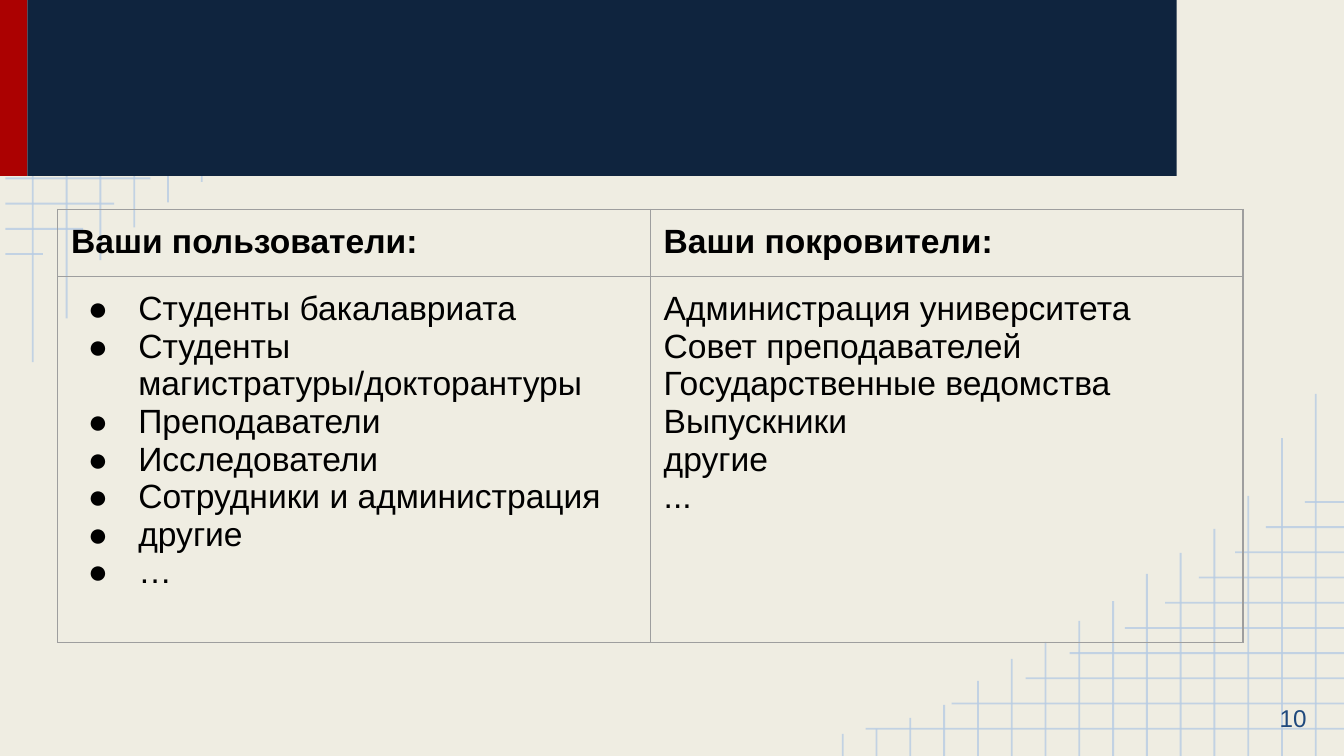
from dataclasses import dataclass

from lxml.etree import SubElement
from pptx import Presentation
from pptx.dml.color import RGBColor
from pptx.enum.shapes import MSO_CONNECTOR, MSO_SHAPE
from pptx.enum.text import MSO_ANCHOR, PP_ALIGN
from pptx.oxml.ns import qn
from pptx.util import Pt

CREAM = RGBColor(0xEF, 0xED, 0xE2)
GRID_BLUE = RGBColor(0xB7, 0xCC, 0xE4)
RED = RGBColor(0xAB, 0x01, 0x01)
NAVY = RGBColor(0x0F, 0x24, 0x3E)
NUMBER_BLUE = RGBColor(0x1F, 0x49, 0x7D)
BORDER_GREY = RGBColor(0x9E, 0x9E, 0x9E)
BLACK = RGBColor(0, 0, 0)
FONT = "Arial"
INSET = Pt(7.2)
GRID_OPACITY = "78000"
ROW_GAP = 13.5
COLUMN_GAP = 18.1


@dataclass(frozen=True)
class Grid:
    """Ruled corner: lines run from a shared edge to stepped ends."""
    edge_x: float
    edge_y: float
    first_row_y: float
    first_column_x: float
    direction: int
    row_ends: tuple[float, ...]
    column_ends: tuple[float, ...]


@dataclass(frozen=True)
class Band:
    left: float
    width: float
    color: RGBColor


@dataclass(frozen=True)
class Group:
    heading: str
    members: tuple[str, ...]
    bulleted: bool


GRIDS = (
    Grid(2.9, 0, 95.6, 17.6, 1,
         (80.6, 61.2, 44.6, 23),
         (194, 170.6, 139.4, 121.8, 108.4, 97.4)),
    Grid(720, 405, 390.4, 704.9, -1,
         (463.7, 509.8, 549.4, 573.1, 602.6, 624.2, 642.2, 661.7, 678.2, 699.1),
         (211, 234.7, 265.7, 283.4, 296.2, 307.5, 322, 332.7, 343.9, 353,
          364.8, 377.7, 384.6, 390.5, 393.2)),
)
BANDS = (Band(0, 14.7, RED), Band(14.7, 615.7, NAVY))
GROUPS = (
    Group("Ваши пользователи:",
          ("Студенты бакалавриата", "Студенты магистратуры/докторантуры",
           "Преподаватели", "Исследователи", "Сотрудники и администрация",
           "другие", "…"), True),
    Group("Ваши покровители:",
          ("Администрация университета", "Совет преподавателей",
           "Государственные ведомства", "Выпускники", "другие", "..."), False),
)


def draw_line(page, x1: float, y1: float, x2: float, y2: float) -> None:
    line = page.shapes.add_connector(
        MSO_CONNECTOR.STRAIGHT, Pt(x1), Pt(y1), Pt(x2), Pt(y2))
    line.line.width = Pt(1)
    line.line.color.rgb = GRID_BLUE
    properties = line._element.spPr
    color = properties.find(".//" + qn("a:srgbClr"))
    SubElement(color, qn("a:alpha"), val=GRID_OPACITY)
    SubElement(properties, qn("a:effectLst"))


def draw_grid(page, grid: Grid) -> None:
    for index, end in enumerate(grid.row_ends):
        y = grid.first_row_y + grid.direction * index * ROW_GAP
        draw_line(page, grid.edge_x, y, end, y)
    for index, end in enumerate(grid.column_ends):
        x = grid.first_column_x + grid.direction * index * COLUMN_GAP
        draw_line(page, x, end, x, grid.edge_y)


def draw_band(page, band: Band) -> None:
    box = page.shapes.add_shape(
        MSO_SHAPE.RECTANGLE, Pt(band.left), Pt(-0.7), Pt(band.width), Pt(95))
    box.shadow.inherit = False
    box.fill.solid()
    box.fill.fore_color.rgb = band.color
    box.line.fill.background()


def style_font(para, size: float, color: RGBColor, bold: bool = False) -> None:
    para.font.name = FONT
    para.font.size = Pt(size)
    para.font.bold = bold
    para.font.color.rgb = color


def set_insets(target) -> None:
    target.margin_left = target.margin_right = INSET
    target.margin_top = target.margin_bottom = INSET


def add_bullet(para) -> None:
    properties = para._p.get_or_add_pPr()
    properties.set("marL", str(Pt(36)))
    properties.set("indent", str(Pt(-27)))
    color = SubElement(properties, qn("a:buClr"))
    SubElement(color, qn("a:srgbClr"), val=str(BLACK))
    SubElement(properties, qn("a:buFont"), typeface=FONT)
    SubElement(properties, qn("a:buChar"), char="●")


def fill_cell(cell, lines: tuple[str, ...], bold: bool, bulleted: bool) -> None:
    set_insets(cell)
    cell.vertical_anchor = MSO_ANCHOR.TOP
    properties = cell._tc.get_or_add_tcPr()
    for side in ("lnL", "lnR", "lnT", "lnB"):
        border = SubElement(properties, qn(f"a:{side}"), w=str(Pt(0.75)))
        fill = SubElement(border, qn("a:solidFill"))
        SubElement(fill, qn("a:srgbClr"), val=str(BORDER_GREY))
    cell.fill.background()
    frame = cell.text_frame
    for index, line in enumerate(lines):
        para = frame.add_paragraph() if index else frame.paragraphs[0]
        para.add_run().text = line
        if bulleted:
            add_bullet(para)
        style_font(para, 18, BLACK, bold)


def draw_table(page, groups: tuple[Group, ...]) -> None:
    heights = (34.8, 195.8)
    table = page.shapes.add_table(
        len(heights), len(groups), Pt(30.9), Pt(112.2), Pt(635), Pt(sum(heights))).table
    table.first_row = False
    table.horz_banding = False
    for row, height in zip(table.rows, heights):
        row.height = Pt(height)
    for column, group in enumerate(groups):
        table.columns[column].width = Pt(317.5)
        fill_cell(table.cell(0, column), (group.heading,), True, False)
        fill_cell(table.cell(1, column), group.members, False, group.bulleted)


def draw_page_number(page, number: str) -> None:
    box = page.shapes.add_textbox(Pt(663.8), Pt(364.3), Pt(43.2), Pt(41))
    frame = box.text_frame
    frame.word_wrap = True
    frame.vertical_anchor = MSO_ANCHOR.MIDDLE
    set_insets(frame)
    para = frame.paragraphs[0]
    para.add_run().text = number
    para.alignment = PP_ALIGN.RIGHT
    style_font(para, 13, NUMBER_BLUE)


def main() -> None:
    deck = Presentation()
    deck.slide_width, deck.slide_height = Pt(720), Pt(405)
    page = deck.slides.add_slide(deck.slide_layouts[6])
    page.background.fill.solid()
    page.background.fill.fore_color.rgb = CREAM

    # Ruled corners behind everything
    for grid in GRIDS:
        draw_grid(page, grid)
    draw_page_number(page, "10")

    # Header bands
    for band in BANDS:
        draw_band(page, band)

    # Users and patrons
    draw_table(page, GROUPS)
    deck.save("out.pptx")


if __name__ == "__main__":
    main()
